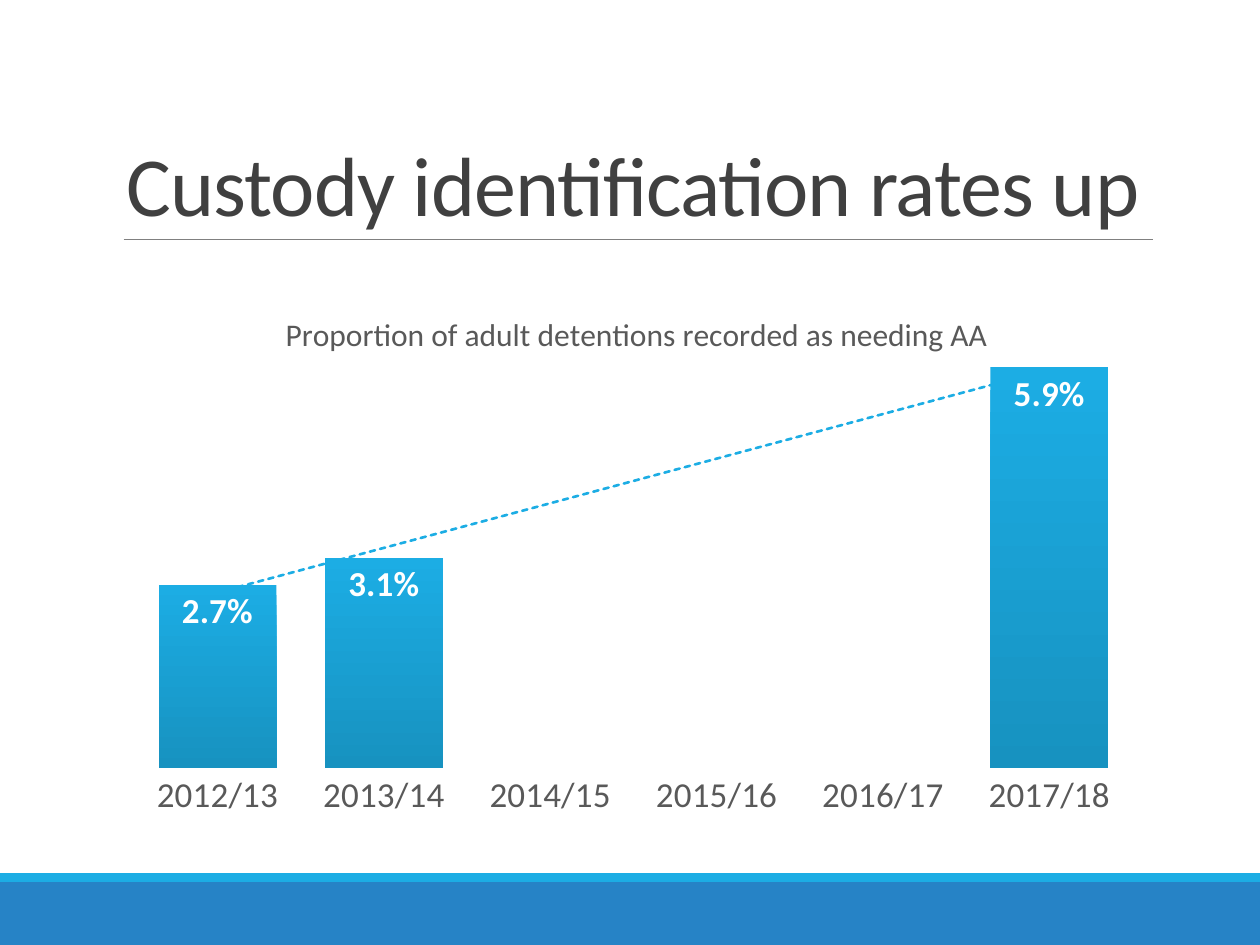
from lxml.etree import SubElement
from pptx import Presentation
from pptx.chart.data import CategoryChartData
from pptx.dml.color import RGBColor
from pptx.enum.chart import XL_CHART_TYPE, XL_LABEL_POSITION, XL_TICK_MARK
from pptx.enum.shapes import MSO_CONNECTOR, MSO_SHAPE
from pptx.enum.text import MSO_ANCHOR, MSO_AUTO_SIZE, PP_ALIGN
from pptx.oxml import parse_xml
from pptx.oxml.ns import nsdecls, qn
from pptx.util import Cm, Pt

BLUE = RGBColor(0x26, 0x83, 0xC6)
CYAN = RGBColor(0x1C, 0xAD, 0xE4)
DEEP_CYAN = RGBColor(0x17, 0x92, 0xC0)
RULE_GRAY = RGBColor(0x80, 0x80, 0x80)
TITLE_GRAY = RGBColor(0x40, 0x40, 0x40)
LABEL_GRAY = RGBColor(0x59, 0x59, 0x59)
WHITE = RGBColor(0xFF, 0xFF, 0xFF)
FONT = "Calibri"
LEFT, WIDTH = Cm(2.29), Cm(20.96)


def style_font(font, size, color, bold=False):
    font.name = FONT
    font.size = Pt(size)
    font.bold = bold
    font.color.rgb = color


def manual_layout(target, **values):
    """Set chart layout values, given as fractions of the chart's size."""
    return_parts = "".join(f'<c:{name} val="{value}"/>' for name, value in values.items())
    return parse_xml(f"<c:layout {nsdecls('c')}><c:manualLayout>{target}"
                     f'<c:xMode val="edge"/><c:yMode val="edge"/>{return_parts}'
                     "</c:manualLayout></c:layout>")


presentation = Presentation()
presentation.slide_width = Cm(25.4)
presentation.slide_height = Cm(19.05)
slide = presentation.slides.add_slide(presentation.slide_layouts[5])

# Footer bands and the rule under the title
for top, height, color in ((17.78, 1.27, BLUE), (17.6, 0.18, CYAN)):
    band = slide.shapes.add_shape(
        MSO_SHAPE.RECTANGLE, 0, Cm(top), presentation.slide_width, Cm(height))
    band.shadow.inherit = False
    band.fill.solid()
    band.fill.fore_color.rgb = color
    band.line.fill.background()

rule = slide.shapes.add_connector(
    MSO_CONNECTOR.STRAIGHT, Cm(2.49), Cm(4.83), Cm(23.24), Cm(4.83))
rule.line.color.rgb = RULE_GRAY
rule.line.width = Pt(0.5)
SubElement(rule._element.spPr, qn("a:effectLst"))

# Title
title = slide.shapes.title
title.left, title.top, title.width, title.height = LEFT, Cm(0.79), WIDTH, Cm(4.04)
title.text_frame.auto_size = MSO_AUTO_SIZE.NONE
title.text_frame.vertical_anchor = MSO_ANCHOR.BOTTOM
paragraph = title.text_frame.paragraphs[0]
paragraph.alignment = PP_ALIGN.JUSTIFY
paragraph.line_spacing = 0.85
run = paragraph.add_run()
run.text = "Custody identification rates up"
style_font(run.font, 48, TITLE_GRAY)
run.font._element.set("spc", "-50")

# Chart
chart_data = CategoryChartData(number_format="0.0%")
chart_data.categories = ["2012/13", "2013/14", "2014/15", "2015/16", "2016/17", "2017/18"]
chart_data.add_series("Series 1", [0.027, 0.031, None, None, None, 0.059])
chart = slide.shapes.add_chart(
    XL_CHART_TYPE.COLUMN_CLUSTERED, LEFT, Cm(5.74), WIDTH, Cm(10.95), chart_data).chart
chart.has_legend = False
chart.font.name = FONT
chart.font.size = Pt(10)

run = chart.chart_title.text_frame.paragraphs[0].add_run()
run.text = "Proportion of adult detentions recorded as needing AA"
style_font(run.font, 18, LABEL_GRAY)
chart.chart_title.include_in_layout = False
title_element = chart.chart_title._element
for layout in title_element.findall(qn("c:layout")):
    title_element.remove(layout)
title_element.find(qn("c:tx")).addnext(manual_layout("", x=0.16, y=0.04))

plot_area = chart._chartSpace.chart.plotArea
for layout in plot_area.findall(qn("c:layout")):
    plot_area.remove(layout)
plot_area.insert(0, manual_layout(
    '<c:layoutTarget val="inner"/>', x=0.02, y=0.14, w=0.96, h=0.75))

category_axis = chart.category_axis
category_axis.major_tick_mark = XL_TICK_MARK.NONE
category_axis.format.line.fill.background()
style_font(category_axis.tick_labels.font, 20, LABEL_GRAY)

value_axis = chart.value_axis
value_axis.visible = False
value_axis.has_major_gridlines = False
value_axis.minimum_scale = 0
value_axis.maximum_scale = 0.06
value_axis.major_unit = 0.01

plot = chart.plots[0]
plot.gap_width = 41
plot.vary_by_categories = False
series = plot.series[0]
series.format.fill.gradient()
series.format.fill.gradient_angle = 270
for stop, color in zip(series.format.fill.gradient_stops, (CYAN, DEEP_CYAN)):
    stop.color.rgb = color

labels = series.data_labels
labels.show_value = True
labels.position = XL_LABEL_POSITION.INSIDE_END
labels.number_format = "0.0%"
labels.number_format_is_linked = False
style_font(labels.font, 20, WHITE, bold=True)

trendline = parse_xml(
    f"<c:trendline {nsdecls('c', 'a')}><c:spPr><a:ln w=\"{Pt(1.5)}\" cap=\"rnd\">"
    f'<a:solidFill><a:srgbClr val="{CYAN}"/></a:solidFill><a:prstDash val="sysDash"/>'
    '</a:ln></c:spPr><c:trendlineType val="linear"/>'
    '<c:dispRSqr val="0"/><c:dispEq val="0"/></c:trendline>')
series._element.find(qn("c:cat")).addprevious(trendline)

presentation.save("out.pptx")
